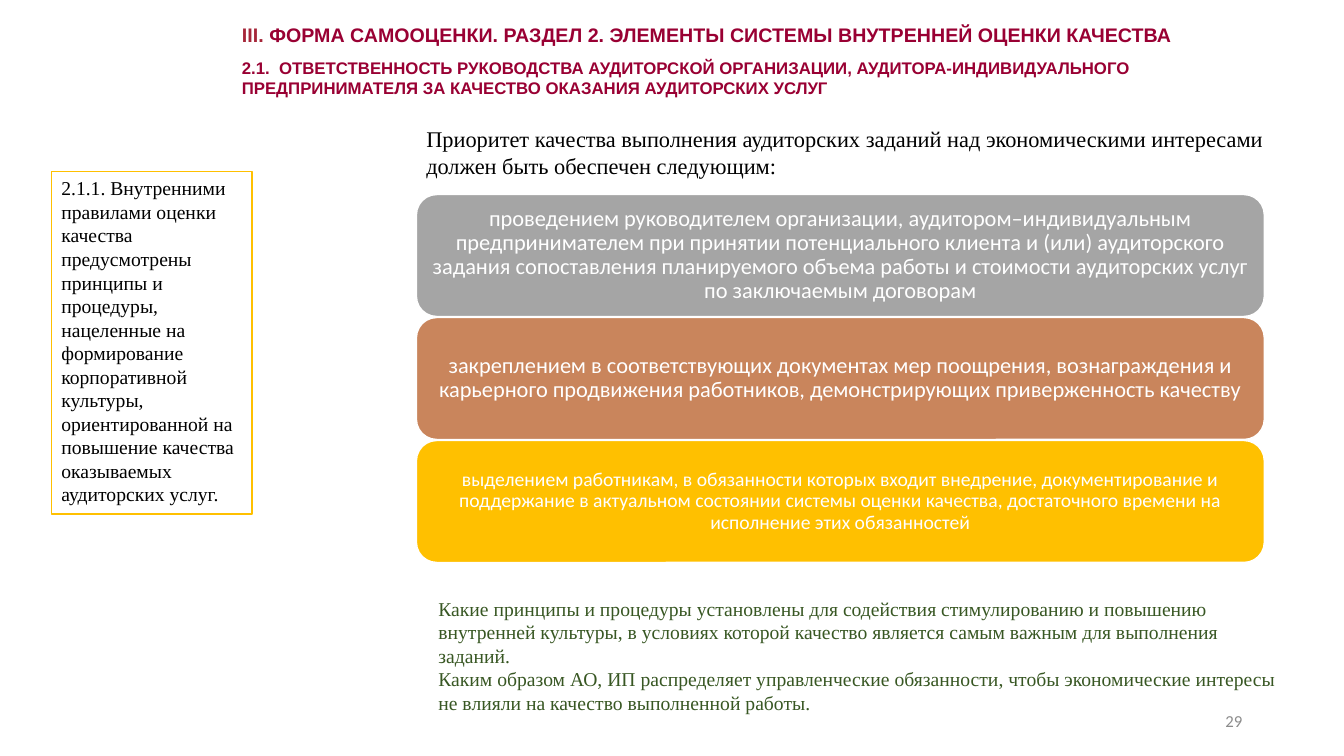
from pptx import Presentation
from pptx.dml.color import RGBColor
from pptx.enum.shapes import MSO_SHAPE
from pptx.enum.text import MSO_ANCHOR, MSO_AUTO_SIZE, PP_ALIGN
from pptx.util import Inches, Pt

RECT, ROUND = MSO_SHAPE.RECTANGLE, MSO_SHAPE.ROUNDED_RECTANGLE
TOP, MID = MSO_ANCHOR.TOP, MSO_ANCHOR.MIDDLE
LEFT, RIGHT = PP_ALIGN.LEFT, PP_ALIGN.RIGHT
CENTER, FULL = PP_ALIGN.CENTER, PP_ALIGN.JUSTIFY
FIXED = MSO_AUTO_SIZE.NONE
SERIF, SANS, BODY = "Times New Roman", "Arial", "Calibri"
WINE, WHITE, BLACK, GOLD = "990033", "FFFFFF", "000000", "FFC000"


def tint(color, code):
    color.rgb = RGBColor.from_string(code)


def apply(target, values):
    for name, value in values.items():
        setattr(target, name, value)


class Page:
    def __init__(self, deck):
        self.slide = deck.slides.add_slide(deck.slide_layouts[5])
        self.frame = {"word_wrap": True, "auto_size": FIXED}
        self.para = {"space_before": Pt(0), "space_after": Pt(0)}

    def fill_text(self, shape, paras, font, size, bold=False, align=LEFT,
                  anchor=TOP, pad=(0.1, 0.05), gap=1.0):
        side, edge = map(Inches, pad)
        frame = shape.text_frame
        apply(frame, {**self.frame, "vertical_anchor": anchor,
                      "margin_left": side, "margin_right": side,
                      "margin_top": edge, "margin_bottom": edge})
        for i, runs in enumerate(paras):
            para = frame.add_paragraph() if i else frame.paragraphs[0]
            apply(para, {**self.para, "alignment": align, "line_spacing": gap})
            for text, code in runs:
                run = para.add_run()
                run.text = text
                apply(run.font, {"name": font, "size": Pt(size), "bold": bold})
                tint(run.font.color, code)

    def title(self, box, runs, **style):
        shape = self.slide.shapes.title
        names = ("left", "top", "width", "height")
        apply(shape, dict(zip(names, map(Inches, box))))
        self.fill_text(shape, [runs], **style)

    def text(self, box, paras, **style):
        shape = self.slide.shapes.add_textbox(*map(Inches, box))
        self.fill_text(shape, paras, **style)

    def shape(self, kind, box, fill, line, runs, **style):
        shape = self.slide.shapes.add_shape(kind, *map(Inches, box))
        shape.shadow.inherit = False
        shape.fill.solid()
        tint(shape.fill.fore_color, fill)
        tint(shape.line.color, line)
        shape.line.width = Pt(1)
        self.fill_text(shape, [runs], **style)


BARS = [
    ("A5A5A5", 16, "проведением руководителем организации, аудитором–индивидуальным предпринимателем при принятии потенциального клиента и (или) аудиторского задания сопоставления планируемого объема работы и стоимости аудиторских услуг по заключаемым договорам"),
    ("C9855C", 16, "закреплением в соответствующих документах мер поощрения, вознаграждения и карьерного продвижения работников, демонстрирующих приверженность качеству"),
    (GOLD, 14, "выделением работникам, в обязанности которых входит внедрение, документирование и поддержание в актуальном состоянии системы оценки качества, достаточного времени на исполнение этих обязанностей"),
]
ASKS = [
    "Какие принципы и процедуры установлены для содействия стимулированию и повышению внутренней культуры, в условиях которой качество является самым важным для выполнения заданий.",
    "Каким образом АО, ИП распределяет управленческие обязанности, чтобы экономические интересы не влияли на качество выполненной работы.",
]


def main():
    deck = Presentation()
    deck.slide_width, deck.slide_height = Inches(13.33), Inches(7.5)
    page = Page(deck)
    page.title((2.3, 0.18, 9.43, 0.34), [
        ("III. ", "A62639"),
        ("ФОРМА САМООЦЕНКИ. РАЗДЕЛ 2. ЭЛЕМЕНТЫ СИСТЕМЫ ВНУТРЕННЕЙ ОЦЕНКИ КАЧЕСТВА", WINE),
    ], font=SANS, size=14, bold=True)
    page.text((2.3, 0.52, 9.55, 0.5), [[
        ("2.1.  ОТВЕТСТВЕННОСТЬ РУКОВОДСТВА АУДИТОРСКОЙ ОРГАНИЗАЦИИ, АУДИТОРА-ИНДИВИДУАЛЬНОГО ПРЕДПРИНИМАТЕЛЯ ЗА КАЧЕСТВО ОКАЗАНИЯ АУДИТОРСКИХ УСЛУГ", WINE),
    ]], font=SANS, size=12, bold=True)
    page.text((4.13, 1.19, 8.5, 0.64), [[
        ("Приоритет качества выполнения аудиторских заданий над экономическими интересами должен быть обеспечен следующим:", BLACK),
    ]], font=SERIF, size=16, align=FULL)
    for i, (fill, size, text) in enumerate(BARS):
        page.shape(ROUND, (4.13, 1.93 + 1.22 * i, 8.41, 1.21), fill, WHITE,
                   [(text, WHITE)], font=BODY, size=size, align=CENTER,
                   anchor=MID, pad=(0.07, 0.07), gap=0.9)
    page.text((4.25, 5.87, 8.64, 1.28), [[(ask, "385723")] for ask in ASKS],
              font=SERIF, size=14)
    page.shape(RECT, (0.51, 1.7, 1.99, 3.4), WHITE, GOLD, [
        ("2.1.1. Внутренними правилами оценки качества предусмотрены принципы и процедуры, нацеленные на формирование корпоративной культуры, ориентированной на повышение качества оказываемых аудиторских услуг.", BLACK),
    ], font=SERIF, size=14)
    page.text((9.42, 6.95, 3, 0.4), [[("29", "8C8C8C")]],
              font=BODY, size=12, align=RIGHT, anchor=MID)
    deck.save("out.pptx")


if __name__ == "__main__":
    main()
